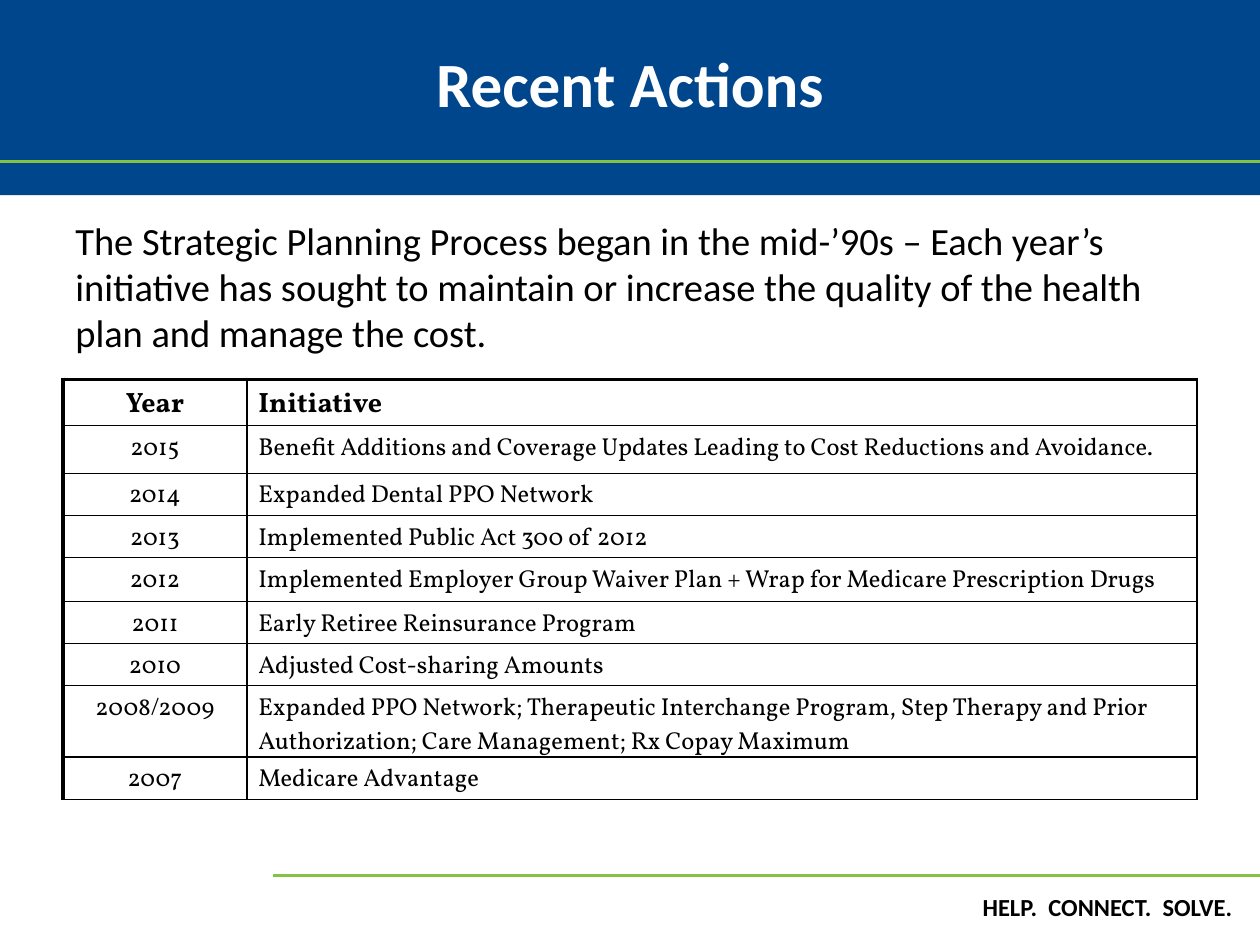
"""Build the Recent Actions slide with its table of yearly initiatives."""
from lxml.etree import SubElement as Sub
from pptx import Presentation
from pptx.dml.color import RGBColor as Rgb
from pptx.enum.shapes import MSO_CONNECTOR as Conn, MSO_SHAPE as Kind
from pptx.enum.text import MSO_ANCHOR as Anchor, PP_ALIGN as Align
from pptx.oxml.ns import qn
from pptx.util import Inches, Pt

HUES = {"blue": "00468C", "green": "84C341", "white": "FFFFFF", "black": "000000"}
TITLE = "Recent Actions"
BODY = ("The Strategic Planning Process began in the mid-’90s – Each year’s initiative "
        "has sought to maintain or increase the quality of the health plan and manage the cost.")
MOTTO = "HELP.  CONNECT.  SOLVE."
ROWS = [
    ("Year", "Initiative", 0.34),
    ("2015", "Benefit Additions and Coverage Updates Leading to Cost Reductions and Avoidance.", 0.38),
    ("2014", "Expanded Dental PPO Network", 0.31),
    ("2013", "Implemented Public Act 300 of 2012", 0.33),
    ("2012", "Implemented Employer Group Waiver Plan + Wrap for Medicare Prescription Drugs", 0.35),
    ("2011", "Early Retiree Reinsurance Program", 0.33),
    ("2010", "Adjusted Cost-sharing Amounts", 0.33),
    ("2008/2009", "Expanded PPO Network; Therapeutic Interchange Program, Step Therapy and Prior "
                  "Authorization; Care Management; Rx Copay Maximum", 0.54),
    ("2007", "Medicare Advantage", 0.33),
]
COLS = (1.46, 7.54)
RULES = [(0, 1.28), (2.17, 6.95)]


def hue(name):
    return Rgb.from_string(HUES[name])


def write(frame, text, size, tint="black", bold=False, align=Align.LEFT, face="Calibri"):
    para = frame.paragraphs[0]
    para.alignment = align
    run = para.add_run()
    run.text = text
    font = run.font
    font.name, font.size, font.bold = face, Pt(size), bold
    font.color.rgb = hue(tint)


def label(slide, box, text, size, anchor=Anchor.TOP, **look):
    frame = slide.shapes.add_textbox(*map(Inches, box)).text_frame
    frame.word_wrap = True
    frame.vertical_anchor = anchor
    write(frame, text, size, **look)


def rule(slide, left, top):
    line = slide.shapes.add_connector(
        Conn.STRAIGHT, Inches(left), Inches(top), Inches(10), Inches(top))
    line.line.color.rgb = hue("green")
    line.line.width = Pt(2)
    Sub(line._element.spPr, qn("a:effectLst"))


def edge(cell, sides):
    props = cell._tc.get_or_add_tcPr()
    for side, width in sides.items():
        line = Sub(props, qn(f"a:ln{side}"), w=str(Pt(width)))
        fill = Sub(line, qn("a:solidFill"))
        Sub(fill, qn("a:srgbClr"), val=HUES["black"])


def grid(slide):
    high = sum(row[-1] for row in ROWS)
    table = slide.shapes.add_table(
        len(ROWS), len(COLS), Inches(0.5), Inches(3.01),
        Inches(sum(COLS)), Inches(high)).table
    table.first_row = table.horz_banding = False
    for col, wide in zip(table.columns, COLS):
        col.width = Inches(wide)
    for r, (*texts, tall) in enumerate(ROWS):
        table.rows[r].height = Inches(tall)
        head = r == 0
        for c, text in enumerate(texts):
            cell = table.cell(r, c)
            edge(cell, {"L": 1 if c else 2.25, "R": 1, "T": 2.25 if head else 1, "B": 1})
            cell.fill.background()
            cell.margin_left = cell.margin_right = Inches(0.09)
            write(cell.text_frame, text, 16 if head else 14, bold=head,
                  align=Align.LEFT if c else Align.CENTER, face="Vollkorn")


def main():
    deck = Presentation()
    deck.slide_width, deck.slide_height = Inches(10), Inches(7.5)
    slide = deck.slides.add_slide(deck.slide_layouts[6])
    band = slide.shapes.add_shape(
        Kind.RECTANGLE, 0, Inches(-0.02), Inches(10), Inches(1.57))
    band.shadow.inherit = False
    band.fill.solid()
    band.fill.fore_color.rgb = hue("blue")
    band.line.fill.background()
    for left, top in RULES:
        rule(slide, left, top)
    label(slide, (7.7, 7.03, 2.33, 0.34), MOTTO, 14, bold=True)
    label(slide, (0.5, 0.03, 9, 1.25), TITLE, 36, Anchor.MIDDLE,
          tint="white", bold=True, align=Align.CENTER)
    label(slide, (0.5, 1.67, 9, 1.3), BODY, 22)
    grid(slide)
    deck.save("out.pptx")


if __name__ == "__main__":
    main()
